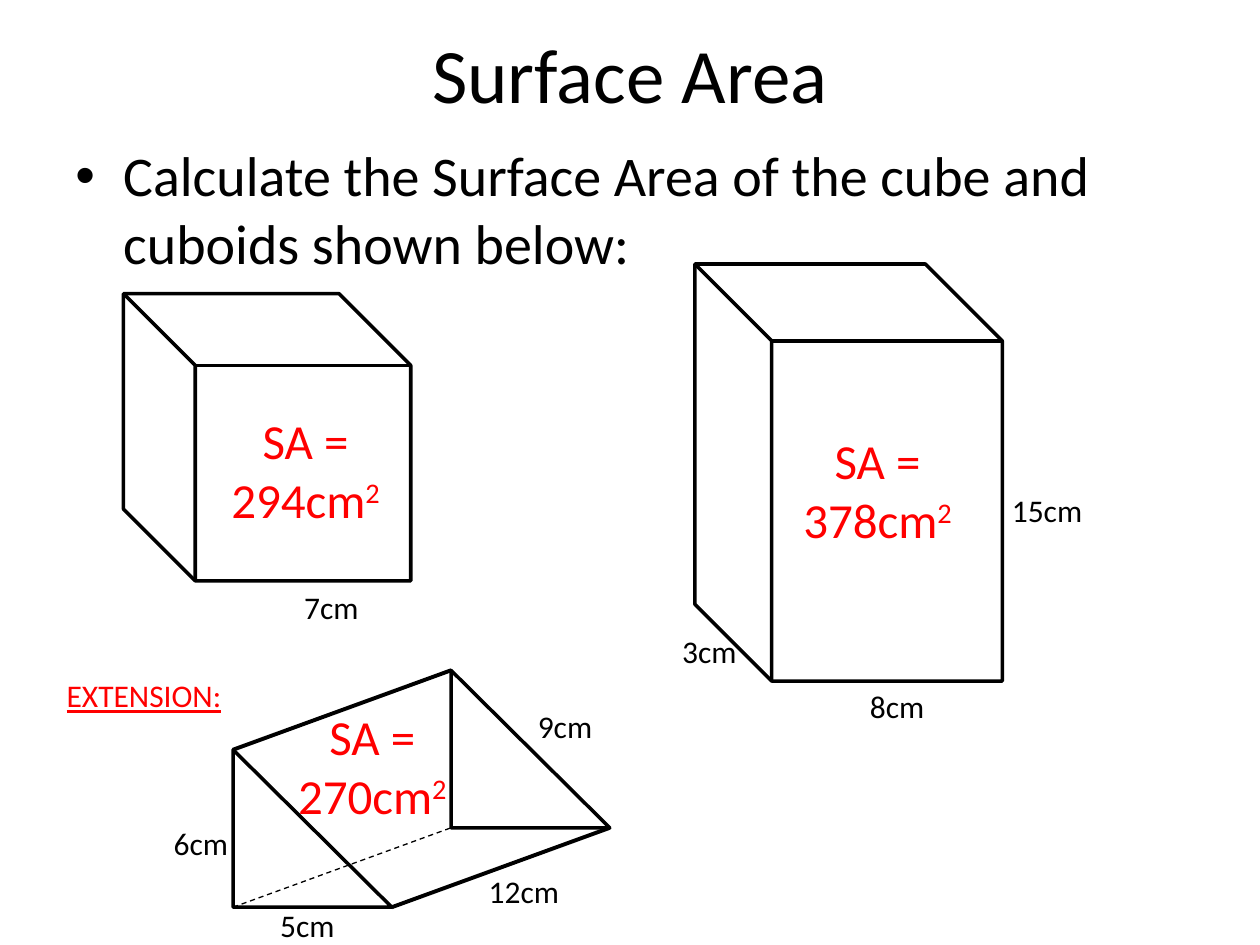
from pptx import Presentation
from pptx.dml.color import RGBColor
from pptx.enum.dml import MSO_LINE_DASH_STYLE as Dash
from pptx.enum.shapes import MSO_CONNECTOR_TYPE as Link, MSO_SHAPE as Shape
from pptx.enum.text import MSO_ANCHOR as Anchor, PP_ALIGN as Align
from pptx.oxml.ns import qn
from pptx.util import Inches, Pt
from lxml.etree import SubElement as Sub

# Grid of 100 columns by 75 rows
WIDE, HIGH = Inches(10), Inches(7.5)
COL, ROW = WIDE / 100, HIGH / 75
BLACK, RED = "000000", "FF0000"
TAG = 11, 4     # size of a length label
SUM = 15.7, 10.4  # size of an answer


def ink(code):
    return RGBColor.from_string(code)


def grid(x, y, w, h):
    return round(x * COL), round(y * ROW), round(w * COL), round(h * ROW)


def write(slide, box, text, size=18, color=BLACK, align=Align.CENTER, power=""):
    frame = slide.shapes.add_textbox(*grid(*box)).text_frame
    frame.word_wrap = True
    para = frame.paragraphs[0]
    para.alignment = align
    font = para.font
    font.name, font.size, font.color.rgb = "Calibri", Pt(size), ink(color)
    runs = [para.add_run()]
    runs[0].text = text
    if power:
        runs.append(para.add_run())
        runs[1].text = power
        runs[1]._r.get_or_add_rPr().set("baseline", "30000")
    for run in runs:
        run.font.size, run.font.name = Pt(size), "Calibri"
        run.font.color.rgb = ink(color)
    return frame


def answer(slide, x, y, area):
    write(slide, (x, y, *SUM), f"SA = {area}cm", 28, RED, power="2")


def solid(slide, kind, box, turn=0):
    part = slide.shapes.add_shape(kind, *grid(*box))
    part.rotation = turn
    part.shadow.inherit = False
    part.fill.background()
    part.line.color.rgb, part.line.width = ink(BLACK), Pt(2)


def edge(slide, x1, y1, x2, y2, width=2.25, dash=None):
    x1, y1, x2, y2 = grid(x1, y1, x2, y2)
    line = slide.shapes.add_connector(Link.STRAIGHT, x1, y1, x2, y2)
    line.line.color.rgb, line.line.width = ink(BLACK), Pt(width)
    if dash:
        line.line.dash_style = dash
    Sub(line._element.spPr, qn("a:effectLst"))


def head(slide, box):
    x, y, w, h = box
    # Title
    title = write(slide, (x, y, w, 11.5), "Surface Area", 44)
    title.vertical_anchor = Anchor.MIDDLE
    # Bulleted task
    task = write(slide, (x, y + 10.7, w, h - 10.7),
                 "Calculate the Surface Area of the cube and cuboids shown below:",
                 32, align=Align.LEFT)
    props = task.paragraphs[0]._p.get_or_add_pPr()
    props.set("marL", str(Inches(0.38)))
    props.set("indent", str(-Inches(0.38)))
    font = props.find(qn("a:defRPr"))
    for name, key, value in (("a:buFont", "typeface", "Arial"),
                             ("a:buChar", "char", "•")):
        mark = props.makeelement(qn(name), {key: value})
        font.addprevious(mark)


def block(slide, box, area, spot, tags):
    x, y, w, h = box
    # The cube preset is turned a quarter, so its sides swap
    solid(slide, Shape.CUBE, (x + (w - h) / 2, y + (h - w) / 2, h, w), 270)
    for dx, dy, text in tags:
        write(slide, (x + dx, y + dy, *TAG), text)
    answer(slide, x + spot[0], y + spot[1], area)


def prism(slide, box):
    x, y, w, h = box
    side, tall = 12.6, 12.5
    back, drop = w - side, h - tall
    # Two ends
    solid(slide, Shape.RIGHT_TRIANGLE, (x, y + drop, side, tall))
    solid(slide, Shape.RIGHT_TRIANGLE, (x + back, y, side, tall))
    # Long edges, the hidden one dashed
    edge(slide, x, y + drop, x + back, y)
    edge(slide, x + side, y + h, x + w, y + tall)
    edge(slide, x, y + h, x + back, y + tall, 0.75, Dash.DASH)
    # Lengths
    write(slide, (x + 0.8, y + 18.2, 10.2, 4), "5cm")
    for dx, dy, text in ((-5.7, 11.7, "6cm"), (19.3, 15.5, "12cm"),
                         (23.2, 2.4, "9cm")):
        write(slide, (x + dx, y + dy, 11.4, 4), text, align=Align.LEFT)
    # Heading and answer
    note = write(slide, (x - 14.2, y, 25.2, 4), "EXTENSION:", 18, RED, Align.LEFT)
    note.paragraphs[0].runs[0].font.underline = True
    answer(slide, x + 3.2, y + 2.4, 270)


def main():
    deck = Presentation()
    deck.slide_width, deck.slide_height = WIDE, HIGH
    slide = deck.slides.add_slide(deck.slide_layouts[6])
    head(slide, (5, 0, 90, 67))
    block(slide, (9.8, 23.3, 22.8, 22.8), 294, (6.6, 8.8), [(11, 22.9, "7cm")])
    block(slide, (55.15, 20.95, 24.4, 33.1), 378, (6.65, 12.75),
          [(10.55, 33.05, "8cm"), (-4.35, 28.75, "3cm"), (22.45, 17.55, "15cm")])
    prism(slide, (18.5, 53.2, 29.9, 18.8))
    deck.save("out.pptx")


if __name__ == "__main__":
    main()
